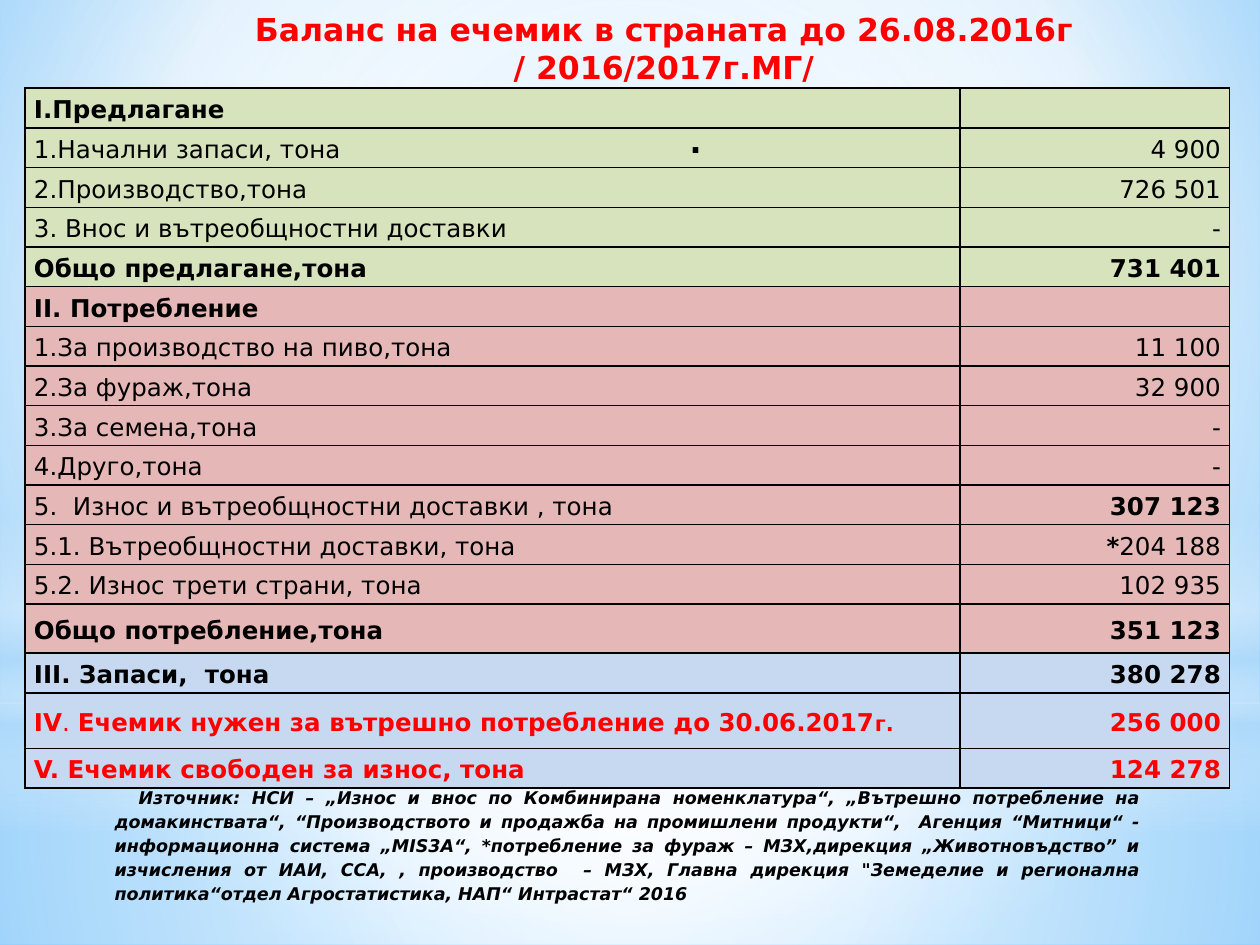
"""Build the barley balance slide: supply, consumption and stocks in one table."""
from lxml import etree
from pptx import Presentation, util as u
from pptx.dml.color import RGBColor
from pptx.enum import shapes, text
from pptx.oxml import parse_xml
from pptx.oxml.ns import nsdecls, qn

BLACK, RED = RGBColor(0, 0, 0), RGBColor(0xFF, 0, 0)
GREEN = RGBColor(0xD6, 0xE3, 0xBC)
PINK = RGBColor(0xE5, 0xB8, 0xB7)
BLUE = RGBColor(0xC6, 0xD9, 0xF1)
WHITE, SKY = RGBColor(0xFF, 0xFF, 0xFF), RGBColor(0xB4, 0xDC, 0xFA)
CORNER, GLOW = RGBColor(0x5B, 0xB9, 0xFF), RGBColor(0x9E, 0xD5, 0xFF)
FONT = "DejaVu Sans"

HEADING = ["Баланс на ечемик в страната до 26.08.2016г", "/ 2016/2017г.МГ/", "."]
SOURCE = [
    ("Източник: НСИ – „Износ и внос по Комбинирана номенклатура“, „Вътрешно "
     "потребление на домакинствата“, “Производството и продажба на промишлени "
     "продукти“,  Агенция “Митници“ - информационна система „MIS3A“,", True),
    (" *", False),
    ("потребление за фураж – МЗХ,дирекция „Животновъдство” и изчисления от ИАИ, "
     "ССА, , производство  – МЗХ, Главна дирекция \"Земеделие и регионална "
     "политика“отдел Агростатистика, НАП“ Интрастат“ 2016", True),
]
# Each run is (words, bold, size).
NEEDED = [("IV", True, 14), (". ", False, 14),
          ("Ечемик нужен за вътрешно потребление до 30.06.2017", True, 14),
          ("г.", True, 12)]
DELIVERIES = [("*", True, 14), ("204 188", False, 14)]
# Each row is (label, value, label bold, value bold).
SECTIONS = [
    (GREEN, BLACK, [
        ("I.Предлагане", "", True, True),
        ("1.Начални запаси, тона", "4 900", False, False),
        ("2.Производство,тона", "726 501", False, False),
        ("3. Внос и вътреобщностни доставки", "-", False, False),
        ("Общо предлагане,тона", "731 401", True, True)]),
    (PINK, BLACK, [
        ("II. Потребление", "", True, True),
        ("1.За производство на пиво,тона", "11 100", False, False),
        ("2.За фураж,тона", "32 900", False, False),
        ("3.За семена,тона", "-", False, False),
        ("4.Друго,тона", "-", False, False),
        ("5.  Износ и вътреобщностни доставки , тона", "307 123", False, True),
        ("5.1. Вътреобщностни доставки, тона", DELIVERIES, False, False),
        ("5.2. Износ трети страни, тона", "102 935", False, False),
        ("Общо потребление,тона", "351 123", True, True)]),
    (BLUE, BLACK, [("III. Запаси,  тона", "380 278", True, True)]),
    (BLUE, RED, [
        (NEEDED, "256 000", True, True),
        ("V. Ечемик свободен за износ, тона", "124 278", True, True)]),
]
COLUMNS = [7.42, 2.14]
TABLE_HEIGHT = 5.56
TALL_ROWS = {13: 0.39, 15: 0.44}

CIRCLE = '<a:path path="circle"><a:fillToRect l="{}" t="{}" r="{}" b="{}"/></a:path>'
CENTRE = CIRCLE.format(*[50000] * 4)
DOWN = '<a:lin ang="5400000" scaled="0"/>'
# Each stop is (position, colour, opacity), all in percent.
BACKDROP = [(0, GLOW, 100), (60, WHITE, 100), (100, CORNER, 100)]
RECT, OVAL = shapes.MSO_SHAPE.RECTANGLE, shapes.MSO_SHAPE.OVAL
LAYERS = [
    (RECT, 5.58, 1.92, CENTRE, [(0, WHITE, 91), (37, WHITE, 76), (100, SKY, 79)]),
    (RECT, 0, 5.58, CENTRE, [(0, WHITE, 89), (48, WHITE, 62), (100, SKY, 79)]),
    (RECT, 4.12, 2.5, DOWN, [(0, WHITE, 0), (29, WHITE, 30), (45, SKY, 40),
                             (55, WHITE, 26), (65, SKY, 60), (100, WHITE, 0)]),
    (OVAL, 1.75, 5.58, CENTRE, [(0, WHITE, 100), (56, WHITE, 0)]),
]


def set_gradient(properties, stops, direction):
    """Replace the solid fill of a properties element with a gradient."""
    marks = "".join(
        f'<a:gs pos="{place * 1000}"><a:srgbClr val="{colour}">'
        f'<a:alpha val="{opacity * 1000}"/></a:srgbClr></a:gs>'
        for place, colour, opacity in stops)
    gradient = parse_xml(f'<a:gradFill {nsdecls("a")} rotWithShape="1">'
                         f'<a:gsLst>{marks}</a:gsLst>{direction}</a:gradFill>')
    properties.replace(properties.find(qn("a:solidFill")), gradient)


def style_run(run, size, colour, bold=True, italic=False):
    """Format one run."""
    run.font.name, run.font.size = FONT, u.Pt(size)
    run.font.bold, run.font.italic = bold, italic
    run.font.color.rgb = colour


def place(holder, left, top, width, height, anchor_top):
    """Move a placeholder and fix its frame."""
    holder.left, holder.top, holder.width, holder.height = map(
        u.Inches, (left, top, width, height))
    frame = holder.text_frame
    frame.auto_size, frame.word_wrap = text.MSO_AUTO_SIZE.NONE, True
    frame.vertical_anchor = text.MSO_ANCHOR.TOP
    frame.margin_top = u.Inches(anchor_top)
    return frame


def indent(paragraph, inches):
    """Set a first-line indent without a bullet."""
    properties = paragraph._p.get_or_add_pPr()
    properties.set("marL", "0")
    properties.set("indent", str(u.Inches(inches)))
    etree.SubElement(properties, qn("a:buNone"))


def fill_cell(cell, content, bold, align, fill, colour):
    """Write, colour and border one cell."""
    cell.fill.solid()
    cell.fill.fore_color.rgb = fill
    cell.vertical_anchor = text.MSO_ANCHOR.MIDDLE
    cell.margin_left = cell.margin_right = u.Inches(0.07)
    cell.margin_top = cell.margin_bottom = 0
    paragraph = cell.text_frame.paragraphs[0]
    paragraph.alignment, paragraph.line_spacing = align, 1.15
    paragraph.font.size = u.Pt(14)
    runs = [(content, bold, 14)] if isinstance(content, str) else content
    for words, run_bold, size in runs:
        if words:
            run = paragraph.add_run()
            run.text = words
            style_run(run, size, colour, run_bold)
    for position, side in enumerate(("lnL", "lnR", "lnT", "lnB")):
        cell._tc.get_or_add_tcPr().insert(position, parse_xml(
            f'<a:{side} {nsdecls("a")} w="12700"><a:solidFill>'
            f'<a:srgbClr val="{BLACK}"/></a:solidFill></a:{side}>'))


def main():
    """Assemble and save the slide."""
    deck = Presentation()
    deck.slide_width, deck.slide_height = u.Inches(10), u.Inches(7.5)
    slide = deck.slides.add_slide(deck.slide_layouts[1])
    title, source = slide.placeholders

    slide.background.fill.solid()
    set_gradient(slide._element.find(".//" + qn("p:bgPr")), BACKDROP,
                 CIRCLE.format(20000, 10000, 20000, 60000))
    for kind, top, height, direction, stops in LAYERS:
        layer = slide.shapes.add_shape(kind, 0, u.Inches(top),
                                       deck.slide_width, u.Inches(height))
        layer.shadow.inherit = False
        layer.line.fill.background()
        layer.fill.solid()
        set_gradient(layer._element.spPr, stops, direction)

    rows = [(fill, colour, *row) for fill, colour, part in SECTIONS for row in part]
    row_height = (TABLE_HEIGHT - sum(TALL_ROWS.values())) / (len(rows) - len(TALL_ROWS))
    balance = slide.shapes.add_table(
        len(rows), len(COLUMNS), u.Inches(0.2), u.Inches(0.7),
        u.Inches(sum(COLUMNS)), u.Inches(TABLE_HEIGHT)).table
    balance.first_row = balance.horz_banding = False
    for column, width in zip(balance.columns, COLUMNS):
        column.width = u.Inches(width)
    for i, (fill, colour, label, value, label_bold, value_bold) in enumerate(rows):
        balance.rows[i].height = u.Inches(TALL_ROWS.get(i, row_height))
        fill_cell(balance.cell(i, 0), label, label_bold, text.PP_ALIGN.LEFT, fill, colour)
        fill_cell(balance.cell(i, 1), value, value_bold, text.PP_ALIGN.RIGHT, fill, colour)

    for holder in (title, source):
        slide.shapes._spTree.append(holder._element)

    heading = place(title, 1.73, 0, 7.08, 1.58, 0.08)
    heading.text = "\n".join(HEADING)
    for paragraph in heading.paragraphs:
        paragraph.alignment = text.PP_ALIGN.CENTER
        style_run(paragraph.runs[0], 18, RED)
    dot = heading.paragraphs[-1]
    dot.space_before = u.Pt(21)
    dot.runs[0].font.color.rgb = BLACK
    indent(dot, 0.5)

    note = place(source, 0.81, 6.17, 8.33, 1.33, 0.05).paragraphs[0]
    note.alignment, note.line_spacing = text.PP_ALIGN.JUSTIFY, 1.15
    note.space_before = u.Pt(0)
    indent(note, 0.19)
    for words, italic in SOURCE:
        run = note.add_run()
        run.text = words
        style_run(run, 10, BLACK, italic=italic)

    deck.save("out.pptx")


if __name__ == "__main__":
    main()
